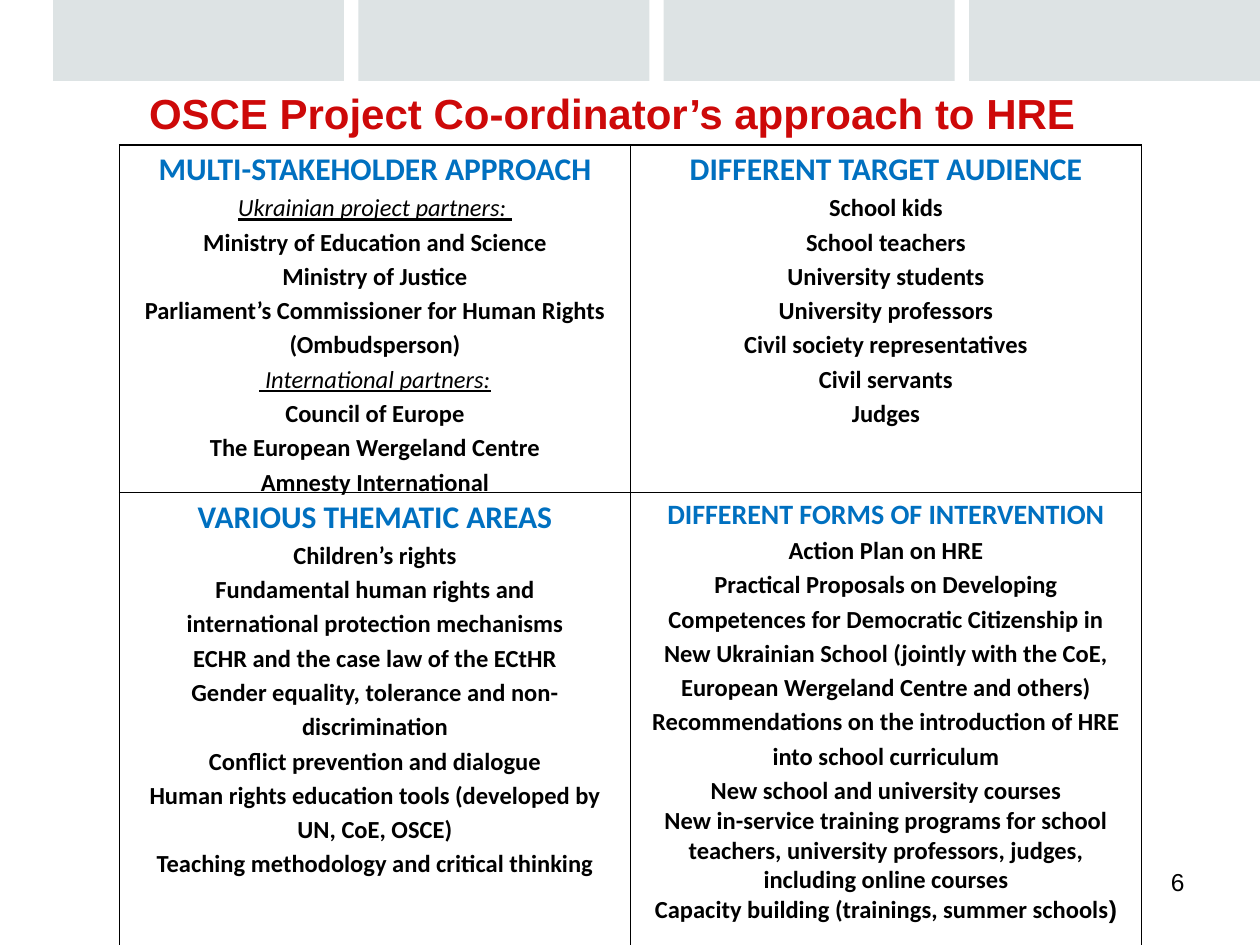
import pptx
import pptx.dml.color
import pptx.enum.shapes
import pptx.enum.text
import pptx.oxml
import pptx.oxml.ns
import pptx.util

Cm = pptx.util.Cm
CENTER = pptx.enum.text.PP_ALIGN.CENTER

PARTNERS = ("MULTI-STAKEHOLDER APPROACH", 18, 0.18, [
    ("label", ["Ukrainian project partners: "]),
    ("item", ["Ministry of Education and Science",
              "Ministry of Justice",
              "Parliament’s Commissioner for Human Rights (Ombudsperson)"]),
    ("label", [" International partners:"]),
    ("item", ["Council of Europe",
              "The European Wergeland Centre",
              "Amnesty International"]),
])
AUDIENCE = ("DIFFERENT TARGET AUDIENCE", 18, 0.18, [
    ("item", ["School kids",
              "School teachers",
              "University students",
              "University professors",
              "Civil society representatives",
              "Civil servants",
              "Judges"]),
])
THEMES = ("VARIOUS THEMATIC AREAS", 18, 0.18, [
    ("item", ["Children’s rights",
              "Fundamental human rights and",
              "international protection mechanisms",
              "ECHR and the case law of the ECtHR",
              "Gender equality, tolerance and non-discrimination",
              "Conflict prevention and dialogue",
              "Human rights education tools (developed by UN, CoE, OSCE)",
              "Teaching methodology and critical thinking"]),
])
INTERVENTIONS = ("DIFFERENT FORMS OF INTERVENTION", 16, 0.3, [
    ("item", ["Action Plan on HRE",
              "Practical Proposals on Developing Competences for Democratic "
              "Citizenship in New Ukrainian School (jointly with the CoE, "
              "European Wergeland Centre and others)",
              "Recommendations on the introduction of HRE into school curriculum",
              "New school and university courses"]),
    ("tight", ["New in-service training programs for school teachers, "
               "university professors, judges, including online courses",
               "Capacity building (trainings, summer schools"]),
])


def color(value):
    return pptx.dml.color.RGBColor.from_string(value)


def add_span(para, text, size, ink, face="Calibri", bold=True):
    span = para.add_run()
    span.text = text
    span.font.name = face
    span.font.size = pptx.util.Pt(size)
    span.font.bold = bold
    span.font.color.rgb = color(ink)
    return span


def add_header_bars(page, left, top, width, height, count=4, gap=0.29):
    bar_width = (width - gap * (count - 1)) / count
    for index in range(count):
        bar = page.shapes.add_shape(
            pptx.enum.shapes.MSO_SHAPE.RECTANGLE,
            Cm(left + index * (bar_width + gap)), Cm(top), Cm(bar_width), Cm(height))
        bar.shadow.inherit = False
        bar.fill.solid()
        bar.fill.fore_color.rgb = color("DDE3E4")
        bar.line.fill.background()


def place_title(page, left, top, width, height):
    title = page.shapes.title
    title.left, title.top, title.width, title.height = map(Cm, (left, top, width, height))
    frame = title.text_frame
    frame.margin_left = frame.margin_right = 0
    frame.word_wrap = False
    frame.auto_size = pptx.enum.text.MSO_AUTO_SIZE.NONE
    frame.vertical_anchor = pptx.enum.text.MSO_ANCHOR.TOP
    para = frame.paragraphs[0]
    para.alignment = CENTER
    add_span(para, "OSCE Project Co-ordinator’s approach to HRE ", 24, "CD0909", "Arial")


def add_page_number(page, left, top, width, height):
    box = page.shapes.add_textbox(Cm(left), Cm(top), Cm(width), Cm(height))
    box.text_frame.word_wrap = True
    para = box.text_frame.paragraphs[0]
    para.alignment = pptx.enum.text.PP_ALIGN.RIGHT
    add_span(para, "6", 14, "000000", "Arial", False)


def style_cell(cell, inset):
    cell.margin_left = cell.margin_right = Cm(inset)
    cell.margin_top = cell.margin_bottom = 0
    properties = cell._tc.get_or_add_tcPr()
    for side in "LRTB":
        properties.append(pptx.oxml.parse_xml(
            f'<a:ln{side} {pptx.oxml.ns.nsdecls("a")} w="12700"><a:solidFill>'
            f'<a:srgbClr val="000000"/></a:solidFill></a:ln{side}>'))
    cell.fill.background()


def fill_cell(cell, section):
    heading, heading_size, inset, groups = section
    style_cell(cell, inset)
    para = cell.text_frame.paragraphs[0]
    para.alignment = CENTER
    para.line_spacing = 1.15
    add_span(para, heading, heading_size, "0070C0")
    for kind, lines in groups:
        for line in lines:
            para = cell.text_frame.add_paragraph()
            para.alignment = CENTER
            para.line_spacing = 1.0 if kind == "tight" else 1.15
            span = add_span(para, line, 14, "000000", bold=kind != "label")
            span.font.italic = span.font.underline = kind == "label"


def add_approach_table(page, left, top, width, row_heights):
    sections = [[PARTNERS, AUDIENCE], [THEMES, INTERVENTIONS]]
    table = page.shapes.add_table(
        2, 2, Cm(left), Cm(top), Cm(width), Cm(sum(row_heights))).table
    table.first_row = table.horz_banding = False
    for row, height, row_sections in zip(table.rows, row_heights, sections):
        row.height = Cm(height)
        for cell, section in zip(row.cells, row_sections):
            fill_cell(cell, section)
    last_para = table.cell(1, 1).text_frame.paragraphs[-1]
    add_span(last_para, ")", 14, "000000", "Arial")


def main():
    deck = pptx.Presentation()
    deck.slide_width, deck.slide_height = Cm(25.4), Cm(19.05)
    page = deck.slides.add_slide(deck.slide_layouts[5])
    add_header_bars(page, 1.07, 0, 24.33, 1.63)
    add_page_number(page, 18.21, 17.35, 5.92, 1.32)
    place_title(page, 1.12, 1.63, 22.68, 0.69)
    add_approach_table(page, 2.41, 2.92, 20.6, [6.81, 9.17])
    deck.save("out.pptx")


if __name__ == "__main__":
    main()
